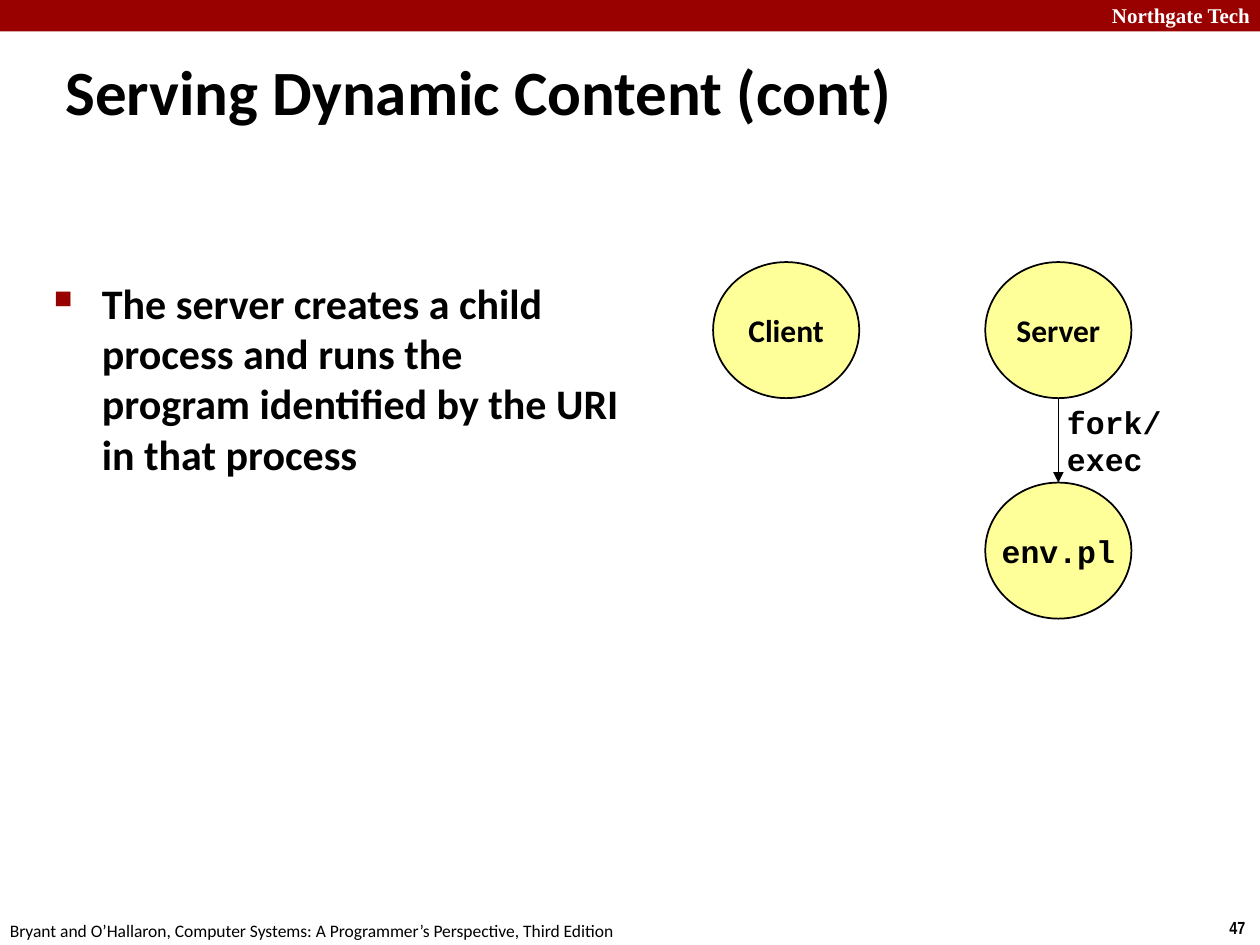
from collections import namedtuple

from lxml.etree import SubElement
from pptx import Presentation
from pptx.dml.color import RGBColor
from pptx.enum.shapes import MSO_CONNECTOR, MSO_SHAPE
from pptx.enum.text import MSO_ANCHOR as Anchor, PP_ALIGN as Align
from pptx.oxml.ns import qn
from pptx.util import Inches, Pt

CRIMSON = RGBColor(0x99, 0x00, 0x00)
PALE_YELLOW = RGBColor(0xFF, 0xFF, 0x99)
BLACK = RGBColor(0x00, 0x00, 0x00)
WHITE = RGBColor(0xFF, 0xFF, 0xFF)

COLUMNS, ROWS = 100, 75
CELL = Inches(0.1)
NODE_WIDTH, NODE_HEIGHT = 11.6, 10.8

Box = namedtuple("Box", "left top width height")


def cells(count):
    """Turn a number of grid cells into a length."""
    return int(count * CELL)


def write(shape, text, font="Calibri", size=18, bold=True, color=BLACK,
          align=Align.LEFT, anchor=Anchor.TOP, wrap=True):
    """Write formatted text into a shape and return its paragraph."""
    frame = shape.text_frame
    frame.word_wrap = wrap
    frame.vertical_anchor = anchor
    paragraph = frame.paragraphs[0]
    paragraph.alignment = align
    run = paragraph.add_run()
    run.text = text
    run.font.name = font
    run.font.size = Pt(size)
    run.font.bold = bold
    run.font.color.rgb = color
    return paragraph


def add_text(slide, box, text, **style):
    """Place a text box on the grid and return its paragraph."""
    return write(slide.shapes.add_textbox(*map(cells, box)), text, **style)


def add_filled(slide, kind, box, fill):
    """Place a flat preset shape on the grid."""
    shape = slide.shapes.add_shape(kind, *map(cells, box))
    shape.shadow.inherit = False
    shape.fill.solid()
    shape.fill.fore_color.rgb = fill
    return shape


def add_header(slide, box):
    """Draw the coloured band with the school name at its right end."""
    band = add_filled(slide, MSO_SHAPE.RECTANGLE, box, CRIMSON)
    band.line.fill.background()
    name_box = Box(box.left + box.width - 20, box.top - 0.3, 20.2, 3)
    add_text(slide, name_box, "Northgate Tech", font="Times New Roman",
             size=12, color=WHITE, align=Align.RIGHT)


def add_footer(slide, box):
    """Write the book reference and the page number."""
    add_text(slide, Box(box.left - 0.2, box.top + 0.2, 50.8, 2.7),
             "Bryant and O’Hallaron, Computer Systems: "
             "A Programmer’s Perspective, Third Edition",
             size=10, bold=False, wrap=False)
    add_text(slide, Box(box.left + box.width - 3.4, box.top, 3.4, 2.7), "47",
             font="Arial Narrow", size=10, wrap=False)


def add_bullet(slide, box, text):
    """Write a paragraph with a square bullet and a hanging indent."""
    paragraph = add_text(slide, box, text, size=24)
    paragraph.space_before = Pt(5)
    properties = paragraph._p.get_or_add_pPr()
    properties.set("marL", str(Inches(0.38)))
    properties.set("indent", str(-Inches(0.38)))
    bullet_color = SubElement(properties, qn("a:buClr"))
    SubElement(bullet_color, qn("a:srgbClr"), val=str(CRIMSON))
    SubElement(properties, qn("a:buSzPct"), val="60000")
    SubElement(properties, qn("a:buChar"), char="■")


def add_node(slide, left, top, label, font="Calibri"):
    """Draw a labelled process circle."""
    node = add_filled(slide, MSO_SHAPE.OVAL,
                      Box(left, top, NODE_WIDTH, NODE_HEIGHT), PALE_YELLOW)
    node.line.color.rgb = BLACK
    node.line.width = Pt(1)
    write(node, label, font=font, align=Align.CENTER, anchor=Anchor.MIDDLE,
          wrap=False)
    return node


def add_arrow(slide, parent, child):
    """Draw an arrow from the bottom of one node to the top of another."""
    center = parent.left + parent.width // 2
    arrow = slide.shapes.add_connector(
        MSO_CONNECTOR.STRAIGHT, center, parent.top + parent.height,
        center, child.top)
    arrow.end_connect(child, 0)
    arrow.line.color.rgb = BLACK
    arrow.line.width = Pt(1)
    SubElement(arrow.line._get_or_add_ln(), qn("a:tailEnd"), type="triangle")
    SubElement(arrow._element.spPr, qn("a:effectLst"))


def add_process_diagram(slide, box):
    """Draw client, server and the child process the server starts."""
    server_left = box.left + box.width - NODE_WIDTH
    child_top = box.top + box.height - NODE_HEIGHT
    add_node(slide, box.left, box.top, "Client")
    server = add_node(slide, server_left, box.top, "Server")
    child = add_node(slide, server_left, child_top, "env.pl",
                     font="Courier New")
    add_arrow(slide, server, child)
    gap_top = box.top + NODE_HEIGHT
    add_text(slide, Box(server_left + 5.5, gap_top, 12, child_top - gap_top),
             "fork/exec", font="Courier New", anchor=Anchor.MIDDLE)


def main():
    """Build and save the slide."""
    deck = Presentation()
    deck.slide_width, deck.slide_height = cells(COLUMNS), cells(ROWS)
    slide = deck.slides.add_slide(deck.slide_layouts[6])
    add_header(slide, Box(0, 0, COLUMNS, 2.5))
    add_footer(slide, Box(0, 72.3, COLUMNS, 2.7))
    add_text(slide, Box(4.2, 3.7, 85, 6.3), "Serving Dynamic Content (cont)",
             size=36)
    add_bullet(slide, Box(3.3, 21.5, 46.9, 20.7),
               "The server creates a child process and runs the program "
               "identified by the URI in that process")
    add_process_diagram(slide, Box(56.6, 20.8, 33.2, 28.3))
    deck.save("out.pptx")


if __name__ == "__main__":
    main()
